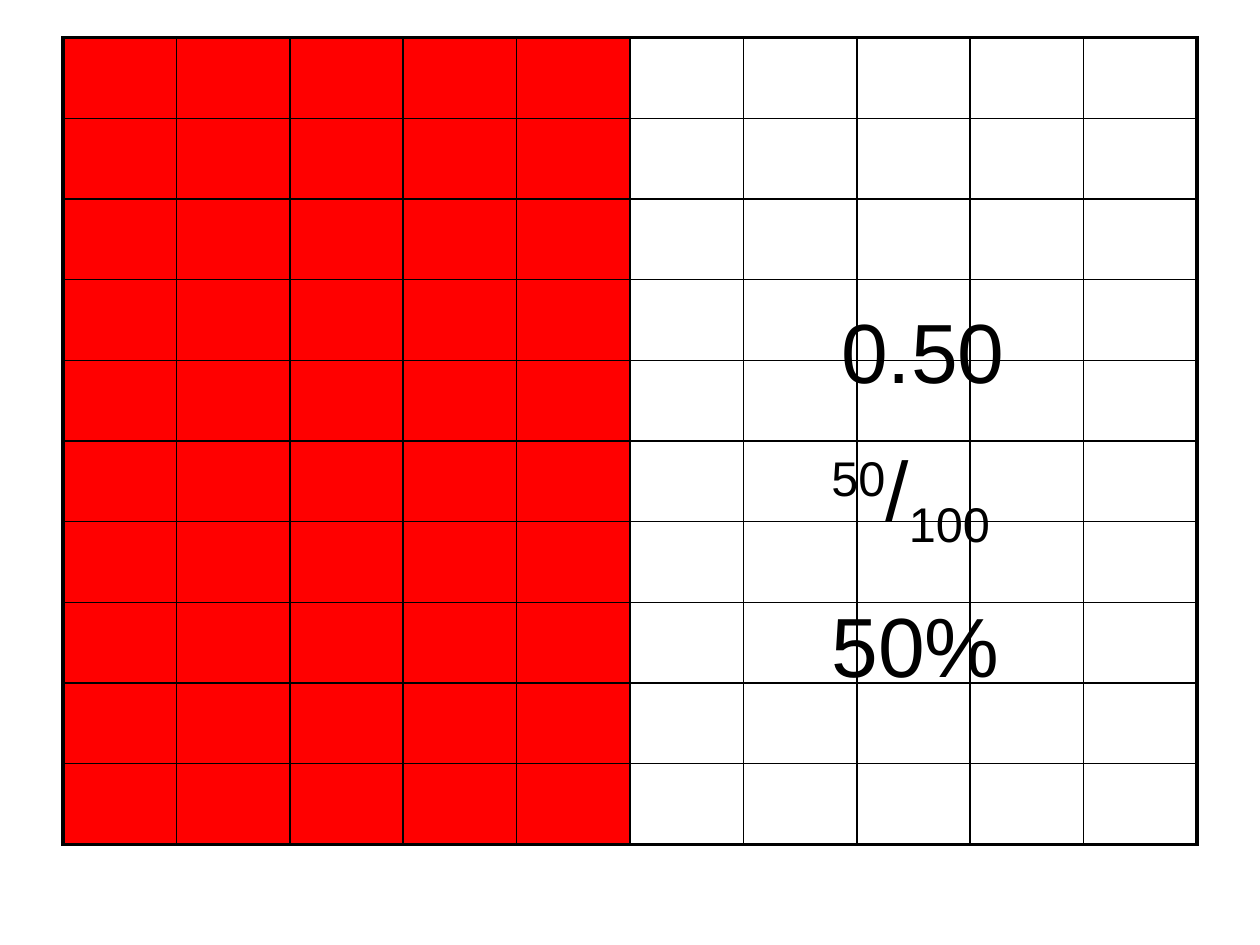
from dataclasses import dataclass

from lxml.etree import SubElement
from pptx import Presentation
from pptx.dml.color import RGBColor
from pptx.enum.text import MSO_AUTO_SIZE
from pptx.oxml import parse_xml
from pptx.oxml.ns import nsdecls, qn
from pptx.slide import Slide
from pptx.table import _Cell
from pptx.text.text import _Paragraph
from pptx.util import Cm, Pt

RED = RGBColor(0xFF, 0x00, 0x00)
BLACK = RGBColor(0x00, 0x00, 0x00)
GRID_SIZE = 10
SHADED_COLUMNS = 5
INNER_LINE = Pt(1)
OUTER_LINE = Pt(2.25)


@dataclass(frozen=True)
class Span:
    text: str
    baseline: int = 0


@dataclass(frozen=True)
class Label:
    left: float
    top: float
    width: float
    height: float
    paragraphs: tuple[tuple[Span, ...], ...]


LABELS = (
    Label(16.51, 8.69, 6.78, 5.33, (
        (Span("50", 30000), Span("/"), Span("100", -25000)),
        (Span("50%"),),
    )),
    Label(16.71, 5.92, 5.72, 2.29, ((Span("0.50"),),)),
)


def set_borders(cell: _Cell, row: int, column: int) -> None:
    last = GRID_SIZE - 1
    on_edge = {"L": column == 0, "R": column == last, "T": row == 0, "B": row == last}
    properties = cell._tc.get_or_add_tcPr()
    for position, (side, outer) in enumerate(on_edge.items()):
        width = OUTER_LINE if outer else INNER_LINE
        properties.insert(position, parse_xml(
            f'<a:ln{side} {nsdecls("a")} w="{width}"><a:solidFill>'
            f'<a:srgbClr val="{BLACK}"/></a:solidFill></a:ln{side}>'
        ))


def draw_hundred_grid(page: Slide) -> None:
    frame = page.shapes.add_table(
        GRID_SIZE, GRID_SIZE, Cm(1.27), Cm(0.76), Cm(22.86), Cm(16.26)
    )
    table = frame.table
    table.first_row = table.horz_banding = False
    for row in range(GRID_SIZE):
        for column in range(GRID_SIZE):
            cell = table.cell(row, column)
            if column < SHADED_COLUMNS:
                cell.fill.solid()
                cell.fill.fore_color.rgb = RED
            else:
                cell.fill.background()
            set_borders(cell, row, column)


def write_paragraph(para: _Paragraph, spans: tuple[Span, ...]) -> None:
    spacing = SubElement(para._p.get_or_add_pPr(), qn("a:spcBef"))
    SubElement(spacing, qn("a:spcPct")).set("val", "50000")
    para.font.name = "Arial"
    para.font.size = Pt(48)
    para.font.color.rgb = BLACK
    for span in spans:
        run = para.add_run()
        run.text = span.text
        if span.baseline:
            run.font._element.set("baseline", str(span.baseline))


def draw_label(page: Slide, label: Label) -> None:
    box = page.shapes.add_textbox(
        Cm(label.left), Cm(label.top), Cm(label.width), Cm(label.height)
    )
    frame = box.text_frame
    frame.word_wrap = True
    frame.auto_size = MSO_AUTO_SIZE.SHAPE_TO_FIT_TEXT
    for index, spans in enumerate(label.paragraphs):
        para = frame.add_paragraph() if index else frame.paragraphs[0]
        write_paragraph(para, spans)


def main() -> None:
    deck = Presentation()
    deck.slide_width, deck.slide_height = Cm(25.4), Cm(19.05)
    page = deck.slides.add_slide(deck.slide_layouts[6])
    draw_hundred_grid(page)
    for label in LABELS:
        draw_label(page, label)
    deck.save("out.pptx")


if __name__ == "__main__":
    main()
